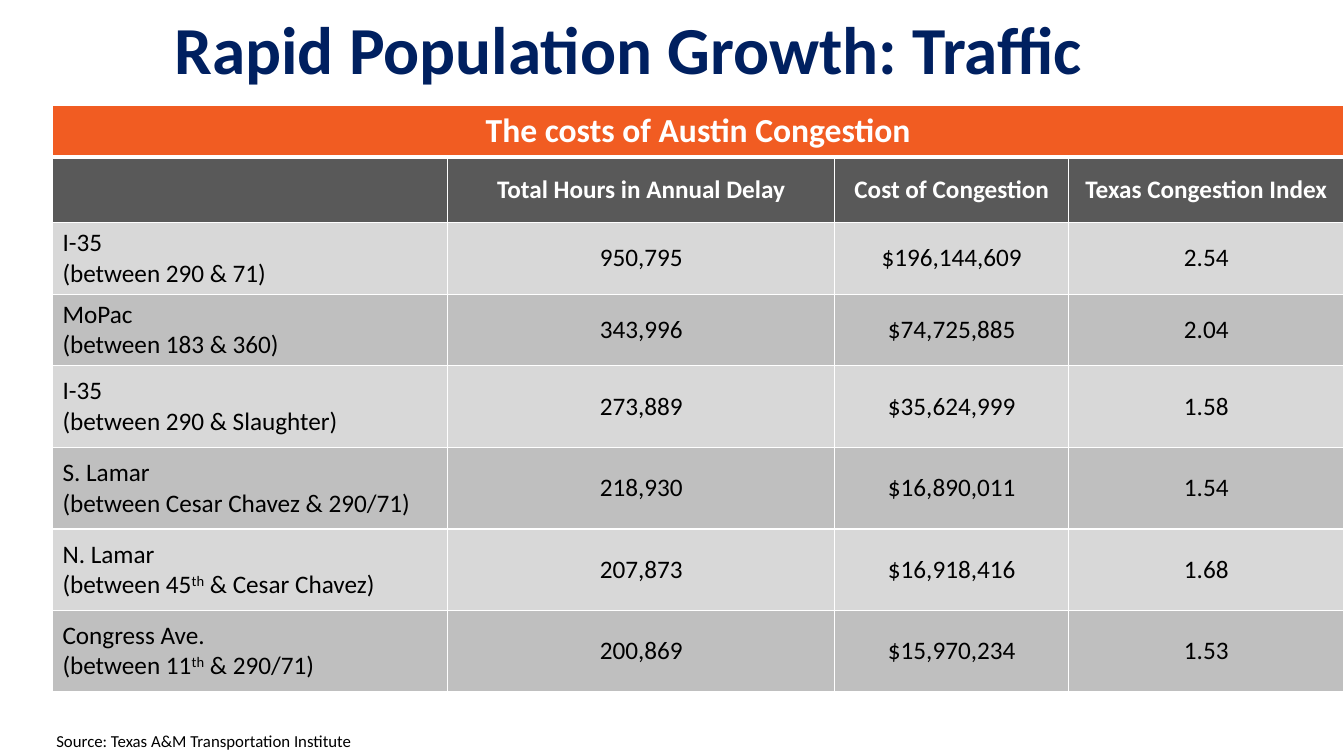
from pptx import Presentation
from pptx.util import Inches, Pt
from pptx.dml.color import RGBColor as Rgb
from pptx.enum.text import PP_ALIGN as Align, MSO_ANCHOR as Anchor
from pptx.oxml import parse_xml as to_xml
from pptx.oxml.ns import nsdecls

HUES = {"navy": "002060", "orange": "F15C22", "dark": "595959", "light": "D8D8D8",
        "mid": "BFBFBF", "white": "FFFFFF", "black": "000000"}
COLS = [3.92, 3.84, 2.32, 2.73]
ROWS = [0.39, 0.65, 0.68, 0.68, 0.81, 0.81, 0.81, 0.8]
HEADS = ["", "Total Hours in Annual Delay", "Cost of Congestion", "Texas Congestion Index"]
ROADS = [
    ["I-35\n(between 290 & 71)", "950,795", "$196,144,609", "2.54"],
    ["MoPac\n(between 183 & 360)", "343,996", "$74,725,885", "2.04"],
    ["I-35\n(between 290 & Slaughter)", "273,889", "$35,624,999", "1.58"],
    ["S. Lamar\n(between Cesar Chavez & 290/71)", "218,930", "$16,890,011", "1.54"],
    ["N. Lamar\n(between 45^th^ & Cesar Chavez)", "207,873", "$16,918,416", "1.68"],
    ["Congress Ave.\n(between 11^th^ & 290/71)", "200,869", "$15,970,234", "1.53"],
]


class Deck:
    def __init__(self, slide, face):
        self.slide = slide
        self.face = face

    def hue(self, name):
        return Rgb.from_string(HUES[name])

    def label(self, frame, text, size, hue, bold=False, align=Align.LEFT):
        lines = text.split("\n")
        frame.text = "\n".join("" for _ in lines)
        for para, line in zip(frame.paragraphs, lines):
            para.alignment = align
            for i, part in enumerate(line.split("^")):
                run = para.add_run()
                run.text = part
                font = run.font
                font.name, font.size, font.bold = self.face, Pt(size), bold
                font.color.rgb = self.hue(hue)
                if i % 2:
                    run._r.get_or_add_rPr().set("baseline", "30000")

    def title(self, text, box):
        shape = self.slide.shapes.title
        shape.left, shape.top, shape.width, shape.height = map(Inches, box)
        frame = shape.text_frame
        frame.word_wrap = True
        frame.vertical_anchor = Anchor.MIDDLE
        self.label(frame, text, 48, "navy", True)
        frame.paragraphs[0].line_spacing = 0.9

    def note(self, text, box):
        frame = self.slide.shapes.add_textbox(*map(Inches, box)).text_frame
        frame.word_wrap = True
        self.label(frame, text, 12, "black")

    def edge(self, cell, top, base):
        props = cell._tc.get_or_add_tcPr()
        widths = {"lnL": 1, "lnR": 1, "lnT": top, "lnB": base}
        for i, (tag, wide) in enumerate(widths.items()):
            props.insert(i, to_xml(
                f'<a:{tag} {nsdecls("a")} w="{Pt(wide)}"><a:solidFill>'
                f'<a:srgbClr val="{HUES["white"]}"/></a:solidFill></a:{tag}>'))

    def cell(self, cell, text, fill, size, hue, bold, align, top=1, base=1):
        cell.fill.solid()
        cell.fill.fore_color.rgb = self.hue(fill)
        cell.vertical_anchor = Anchor.MIDDLE
        self.edge(cell, top, base)
        if text:
            self.label(cell.text_frame, text, size, hue, bold, align)

    def table(self, name, heads, roads, box):
        shape = self.slide.shapes.add_table(len(ROWS), len(COLS), *map(Inches, box))
        grid = shape.table
        grid.first_row = grid.horz_banding = False
        for col, wide in zip(grid.columns, COLS):
            col.width = Inches(wide)
        for row, high in zip(grid.rows, ROWS):
            row.height = Inches(high)
        grid.cell(0, 0).merge(grid.cell(0, len(COLS) - 1))
        for c, head in enumerate(heads):
            self.cell(grid.cell(0, c), "" if c else name, "orange", 24, "white",
                      True, Align.CENTER, base=3)
            self.cell(grid.cell(1, c), head, "dark", 18, "white", True, Align.CENTER, top=3)
        grid.cell(0, 0).vertical_anchor = Anchor.TOP
        for r, road in enumerate(roads):
            for c, text in enumerate(road):
                self.cell(grid.cell(r + 2, c), text, "mid" if r % 2 else "light", 18,
                          "black", False, Align.CENTER if c else Align.LEFT)


def main():
    show = Presentation()
    show.slide_width, show.slide_height = Inches(13.33), Inches(7.5)
    deck = Deck(show.slides.add_slide(show.slide_layouts[5]), "Calibri")
    deck.title("Rapid Population Growth: Traffic", (1.63, 0, 11.7, 1.05))
    deck.table("The costs of Austin Congestion", HEADS, ROADS, (0.52, 1.05, 12.81, 5.77))
    deck.note("Source: Texas A&M Transportation Institute", (0.46, 7.2, 4.75, 0.3))
    show.save("out.pptx")


if __name__ == "__main__":
    main()
